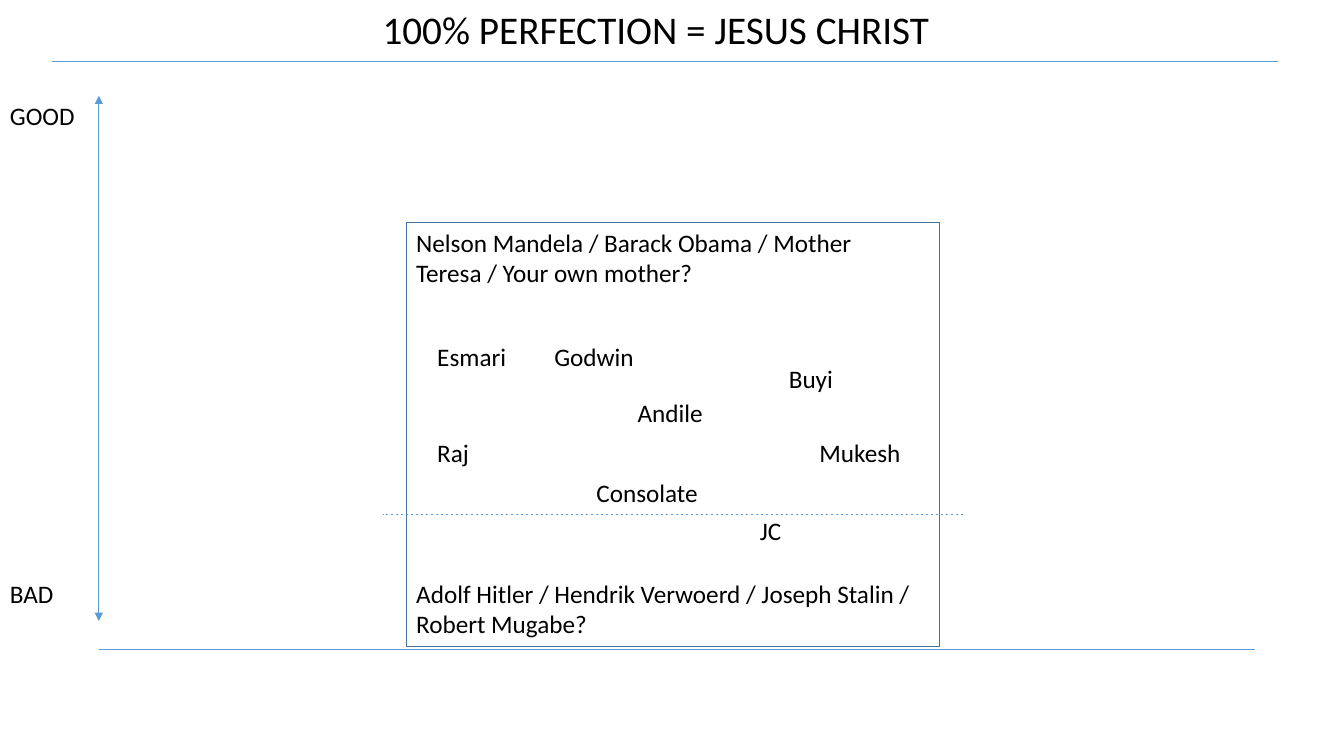
from pptx import Presentation
from pptx.dml.color import RGBColor
from pptx.enum.dml import MSO_LINE_DASH_STYLE as Dash
from pptx.enum.shapes import MSO_CONNECTOR, MSO_SHAPE
from pptx.enum.text import MSO_ANCHOR, MSO_AUTO_SIZE, PP_ALIGN
from pptx.oxml.ns import qn
from pptx.util import Cm, Pt
from lxml.etree import SubElement

BLUE = RGBColor(0x5B, 0x9B, 0xD5)
DARK_BLUE = RGBColor(0x43, 0x73, 0x9E)
BLACK = RGBColor(0, 0, 0)

TITLE = "100% PERFECTION = JESUS CHRIST"
ONE_LINE, TWO_LINES = 1.02, 1.8

# All lengths are in centimetres.
AXIS_X, AXIS_TOP, AXIS_BOTTOM = 2.49, 2.41, 15.65
BASE_Y = 16.36
BAD_Y = 14.45
BOX_LEFT, BOX_TOP, BOX_WIDTH, BOX_HEIGHT = 10.24, 5.61, 13.44, 10.69

# text, left, top, width, height
LABELS = [
    ("GOOD", 0, AXIS_TOP, AXIS_X, ONE_LINE),
    ("BAD", 0, BAD_Y, AXIS_X, ONE_LINE),
    ("Nelson Mandela / Barack Obama / Mother Teresa / Your own mother?",
     BOX_LEFT, BOX_TOP, BOX_WIDTH, TWO_LINES),
    ("Adolf Hitler / Hendrik Verwoerd / Joseph Stalin / Robert Mugabe?",
     BOX_LEFT, BAD_Y, BOX_WIDTH, TWO_LINES),
]

# name, left, top, width
PEOPLE = [
    ("Esmari", 10.77, 8.48, 2.95),
    ("Godwin", 13.72, 8.48, 2.67),
    ("Buyi", 19.63, 9.04, 2.79),
    ("Andile", 15.82, 9.88, 3.07),
    ("Raj", 10.77, 10.9, 2.62),
    ("Mukesh", 20.4, 10.9, 2.82),
    ("Consolate", 14.78, 11.91, 3.66),
    ("JC", 18.9, 12.85, 3.53),
]


def write(shape, text, size, align):
    frame = shape.text_frame
    frame.word_wrap = True
    frame.auto_size = MSO_AUTO_SIZE.SHAPE_TO_FIT_TEXT
    frame.vertical_anchor = MSO_ANCHOR.TOP
    para = frame.paragraphs[0]
    para.text = text
    para.alignment = align
    para.font.name = "Calibri"
    para.font.size = Pt(size)
    para.font.color.rgb = BLACK


def add_label(page, text, left, top, width, height):
    box = page.shapes.add_textbox(Cm(left), Cm(top), Cm(width), Cm(height))
    write(box, text, 18, PP_ALIGN.LEFT)


def add_line(page, x1, y1, x2, y2):
    connector = page.shapes.add_connector(
        MSO_CONNECTOR.STRAIGHT, Cm(x1), Cm(y1), Cm(x2), Cm(y2))
    connector.line.color.rgb = BLUE
    connector.line.width = Pt(0.5)
    SubElement(connector._element.spPr, qn("a:effectLst"))
    return connector.line


def main():
    deck = Presentation()
    deck.slide_width, deck.slide_height = Cm(33.87), Cm(19.05)
    page = deck.slides.add_slide(deck.slide_layouts[5])

    title = page.shapes.title
    title.left, title.top = Cm(4.6), Cm(0)
    title.width, title.height = Cm(23.85), Cm(1.45)
    write(title, TITLE, 28, PP_ALIGN.CENTER)

    add_line(page, 1.32, 1.55, 32.21, 1.55)
    add_line(page, AXIS_X, BASE_Y, 31.62, BASE_Y)

    frame = page.shapes.add_shape(
        MSO_SHAPE.RECTANGLE, Cm(BOX_LEFT), Cm(BOX_TOP), Cm(BOX_WIDTH), Cm(BOX_HEIGHT))
    frame.shadow.inherit = False
    frame.fill.background()
    frame.line.color.rgb = DARK_BLUE
    frame.line.width = Pt(1)

    axis = add_line(page, AXIS_X, AXIS_TOP, AXIS_X, AXIS_BOTTOM)
    for end in ("a:headEnd", "a:tailEnd"):
        SubElement(axis._get_or_add_ln(), qn(end), type="triangle")

    for label in LABELS:
        add_label(page, *label)
    for person in PEOPLE:
        add_label(page, *person, ONE_LINE)

    threshold = add_line(page, 24.28, 12.95, 9.65, 12.95)
    threshold.dash_style = Dash.DASH

    deck.save("out.pptx")


if __name__ == "__main__":
    main()
